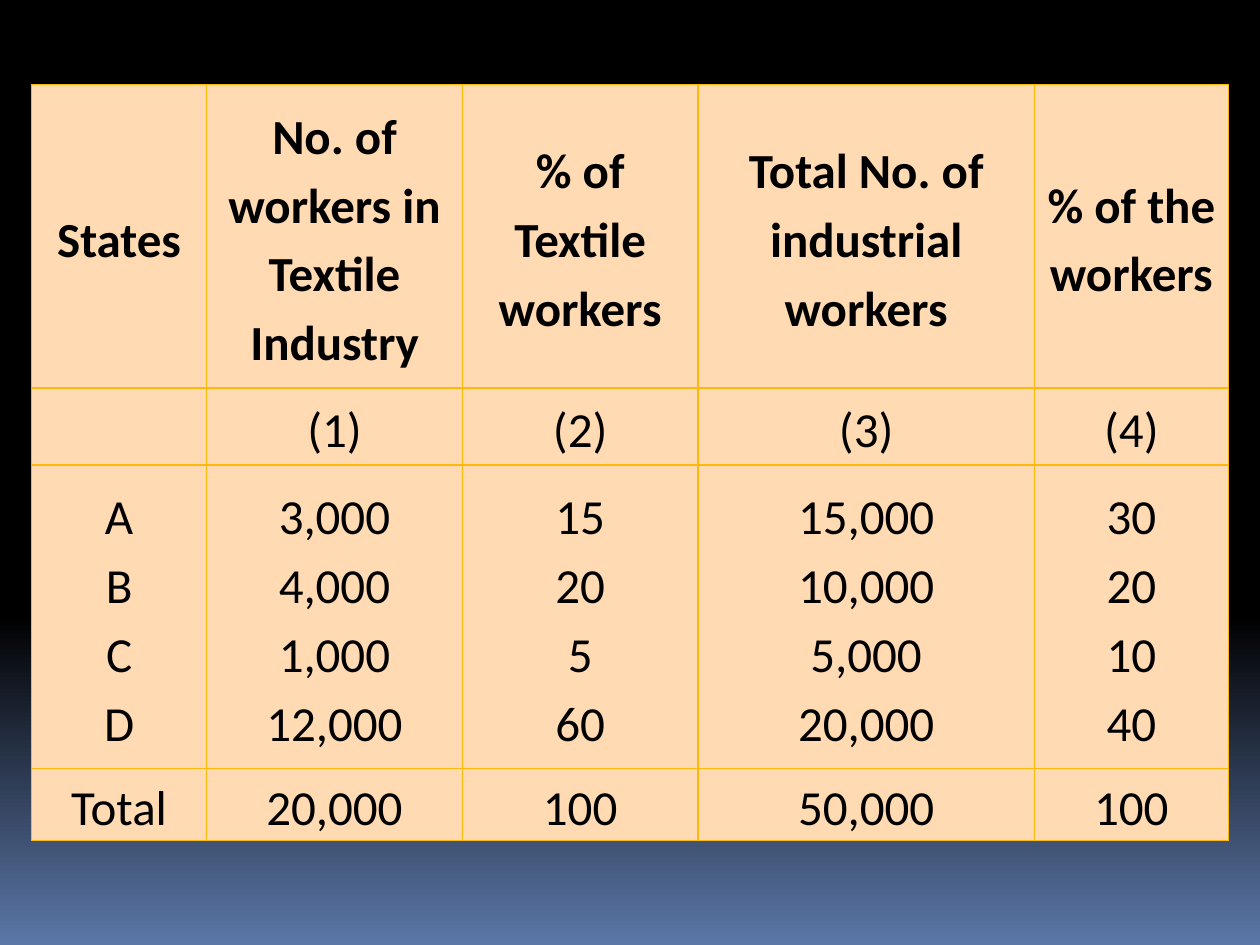
from lxml.etree import SubElement
from pptx import Presentation
from pptx.dml.color import RGBColor
from pptx.enum.text import MSO_ANCHOR, PP_ALIGN
from pptx.oxml.ns import qn
from pptx.util import Inches, Pt

BLACK = RGBColor(0x00, 0x00, 0x00)
BLUE = RGBColor(0x5B, 0x77, 0xA8)
PEACH = RGBColor(0xFF, 0xDA, 0xB3)
GOLD = RGBColor(0xFE, 0xB8, 0x0A)

COLUMN_WIDTHS = [1.39, 2.03, 1.87, 2.67, 1.54]
ROW_HEIGHTS = [2.41, 0.61, 2.41, 0.57]
ROWS = [
    [
        ["States"],
        ["No. of workers in Textile Industry"],
        ["% of Textile workers"],
        ["Total No. of industrial workers"],
        ["% of the workers"],
    ],
    [[], ["(1)"], ["(2)"], ["(3)"], ["(4)"]],
    [
        ["A", "B", "C", "D"],
        ["3,000", "4,000", "1,000", "12,000"],
        ["15", "20", "5", "60"],
        ["15,000", "10,000", "5,000", "20,000"],
        ["30", "20", "10", "40"],
    ],
    [["Total"], ["20,000"], ["100"], ["50,000"], ["100"]],
]


def paint_background(page):
    fill = page.background.fill
    fill.gradient()
    fill.gradient_angle = 270
    for stop, position, color in zip(fill.gradient_stops, (0.65, 1), (BLACK, BLUE)):
        stop.position = position
        stop.color.rgb = color


def add_borders(cell):
    properties = cell._tc.get_or_add_tcPr()
    for side in ("a:lnL", "a:lnR", "a:lnT", "a:lnB"):
        line = SubElement(properties, qn(side), w=str(Pt(0.94)))
        solid = SubElement(line, qn("a:solidFill"))
        SubElement(solid, qn("a:srgbClr"), val=str(GOLD))


def write_lines(cell, lines, bold):
    frame = cell.text_frame
    for index, text in enumerate(lines):
        para = frame.add_paragraph() if index else frame.paragraphs[0]
        para.alignment = PP_ALIGN.CENTER
        para.line_spacing = 1.15
        span = para.add_run()
        span.text = text
        span.font.name = "Calibri"
        span.font.size = Pt(28)
        span.font.bold = bold
        span.font.color.rgb = BLACK


def format_cell(cell):
    add_borders(cell)
    cell.fill.solid()
    cell.fill.fore_color.rgb = PEACH
    cell.vertical_anchor = MSO_ANCHOR.MIDDLE
    cell.margin_left = cell.margin_right = Inches(0.07)
    cell.margin_top = cell.margin_bottom = 0


def add_workers_table(page):
    frame = page.shapes.add_table(
        len(ROW_HEIGHTS), len(COLUMN_WIDTHS),
        Inches(0.25), Inches(0.67), Inches(9.5), Inches(6),
    )
    table = frame.table
    table.horz_banding = False
    for column, width in zip(table.columns, COLUMN_WIDTHS):
        column.width = Inches(width)
    for row_index, (row, height) in enumerate(zip(table.rows, ROW_HEIGHTS)):
        row.height = Inches(height)
        for cell, lines in zip(row.cells, ROWS[row_index]):
            format_cell(cell)
            write_lines(cell, lines, bold=row_index == 0)


def main():
    deck = Presentation()
    deck.slide_width = Inches(10)
    deck.slide_height = Inches(7.5)
    page = deck.slides.add_slide(deck.slide_layouts[6])
    paint_background(page)
    add_workers_table(page)
    deck.save("out.pptx")


if __name__ == "__main__":
    main()
